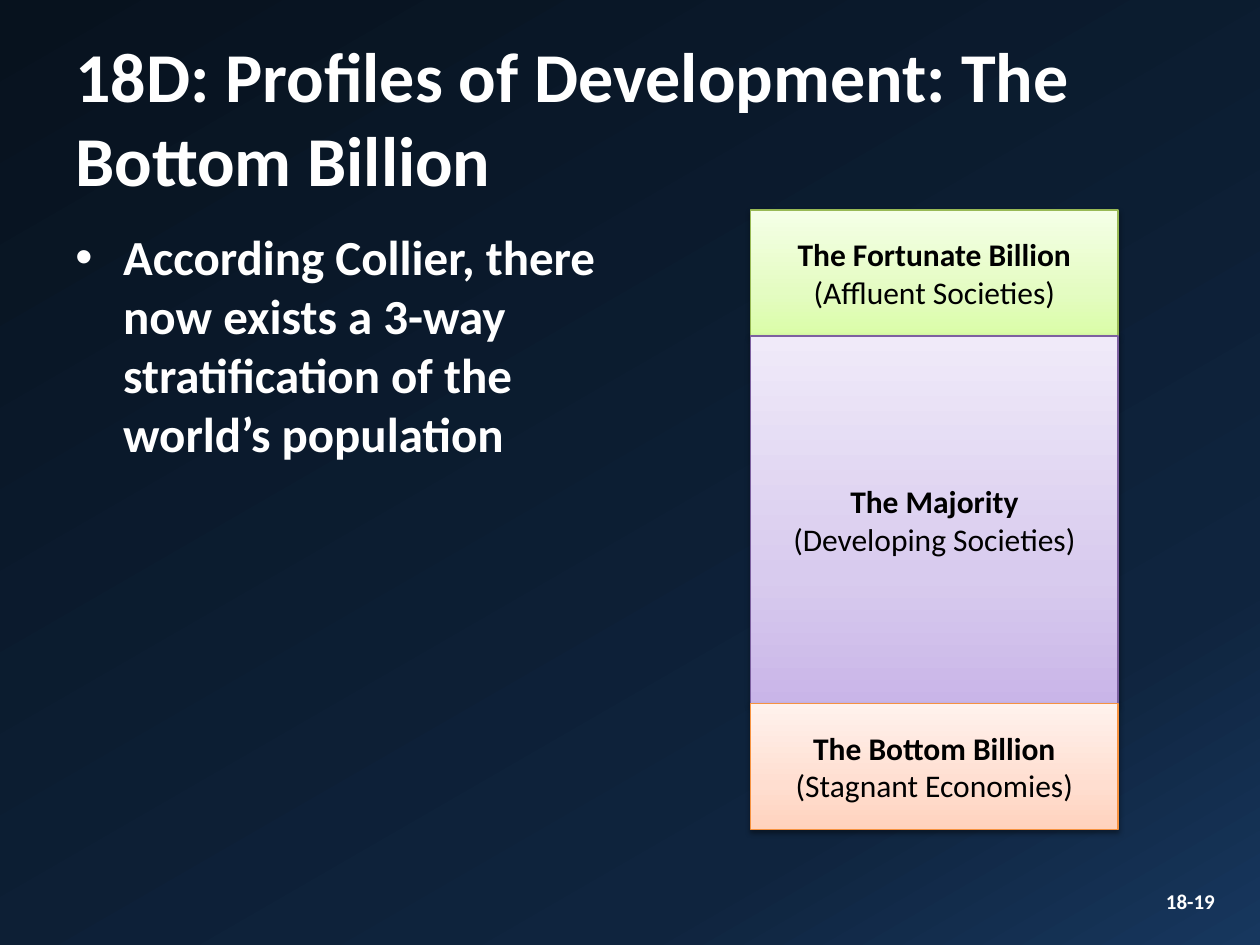
from dataclasses import dataclass

from lxml import etree
from pptx import Presentation
from pptx import util as u
from pptx.dml.color import RGBColor
from pptx.enum import shapes, text
from pptx.oxml.ns import qn

FONT = "Calibri"
WHITE = RGBColor(0xFF, 0xFF, 0xFF)
BLACK = RGBColor(0x00, 0x00, 0x00)
GREEN_LINE = RGBColor(0x98, 0xB9, 0x55)
PURPLE_LINE = RGBColor(0x7D, 0x60, 0xA0)
ORANGE_LINE = RGBColor(0xF6, 0x92, 0x40)
GREENS = tuple(map(RGBColor.from_string, ("DAFDA7", "E4FCC2", "F5FFE7")))
PURPLES = tuple(map(RGBColor.from_string, ("C9B5E8", "D8CBEE", "F0EAF9")))
ORANGES = tuple(map(RGBColor.from_string, ("FFD2BD", "FFDED0", "FFF2ED")))
NIGHT_BLUES = tuple(map(RGBColor.from_string, ("07121E", "0F243E", "17375E")))

# The stack sits on a grid of 1/24 inch
STACK_LEFT, STACK_TOP, STACK_WIDTH = 143 / 24, 40 / 24, 70 / 24


@dataclass
class Stratum:
    name: str
    description: str
    height: float
    colors: tuple
    line: RGBColor


STRATA = [
    Stratum("The Fortunate Billion", "(Affluent Societies)", 1, GREENS, GREEN_LINE),
    Stratum("The Majority", "(Developing Societies)", STACK_WIDTH, PURPLES, PURPLE_LINE),
    Stratum("The Bottom Billion", "(Stagnant Economies)", 1, ORANGES, ORANGE_LINE),
]


def add_color(parent, color: RGBColor):
    return etree.SubElement(parent, qn("a:srgbClr"), val=str(color))


def set_gradient(fill, owner, colors: tuple, middle: int, angle: int) -> None:
    """Fill with three stops; the angle runs clockwise in degrees."""
    fill.gradient()
    gradient = next(owner.iter(qn("a:gradFill")))
    for child in list(gradient):
        gradient.remove(child)
    stops = etree.SubElement(gradient, qn("a:gsLst"))
    for position, color in zip((0, middle, 100), colors):
        add_color(etree.SubElement(stops, qn("a:gs"), pos=str(position * 1000)), color)
    etree.SubElement(gradient, qn("a:lin"), ang=str(angle * 60000), scaled="0")


def add_shadow(shape) -> None:
    effects = shape._element.spPr.find(qn("a:effectLst"))
    shadow = etree.SubElement(
        effects, qn("a:outerShdw"), blurRad=str(u.Pt(3.1)), dist=str(u.Pt(1.6)),
        dir=str(90 * 60000), rotWithShape="0")
    etree.SubElement(add_color(shadow, BLACK), qn("a:alpha"), val="38000")


def write_text(frame, content: str, *, size: float, color: RGBColor = WHITE,
               bold: bool = True, align=text.PP_ALIGN.LEFT,
               anchor=text.MSO_ANCHOR.MIDDLE, new_paragraph: bool = False):
    frame.word_wrap = True
    frame.vertical_anchor = anchor
    paragraph = frame.add_paragraph() if new_paragraph else frame.paragraphs[0]
    paragraph.alignment = align
    run = paragraph.add_run()
    run.text = content
    run.font.name = FONT
    run.font.size = u.Pt(size)
    run.font.bold = bold
    run.font.color.rgb = color
    return paragraph


def add_text(slide, content: str, left: float, top: float, width: float,
             height: float, **text_format):
    box = slide.shapes.add_textbox(*map(u.Inches, (left, top, width, height)))
    return write_text(box.text_frame, content, **text_format)


def add_bullet(paragraph, indent: float) -> None:
    properties = paragraph._p.get_or_add_pPr()
    properties.set("marL", str(u.Inches(indent)))
    properties.set("indent", str(-u.Inches(indent)))
    etree.SubElement(properties, qn("a:buFont"), typeface="Arial")
    etree.SubElement(properties, qn("a:buChar"), char="•")


def add_stratum(slide, stratum: Stratum, top: float) -> None:
    shape = slide.shapes.add_shape(
        shapes.MSO_SHAPE.RECTANGLE,
        *map(u.Inches, (STACK_LEFT, top, STACK_WIDTH, stratum.height)))
    shape.shadow.inherit = False
    set_gradient(shape.fill, shape._element.spPr, stratum.colors, 35, 270)
    shape.line.color.rgb = stratum.line
    shape.line.width = u.Pt(0.75)
    add_shadow(shape)
    centered = dict(size=18, color=BLACK, align=text.PP_ALIGN.CENTER)
    write_text(shape.text_frame, stratum.name, **centered)
    write_text(shape.text_frame, stratum.description, bold=False,
               new_paragraph=True, **centered)


def main() -> None:
    presentation = Presentation()
    presentation.slide_width = u.Inches(10)
    presentation.slide_height = u.Inches(7.5)
    slide = presentation.slides.add_slide(presentation.slide_layouts[6])
    set_gradient(slide.background.fill, slide._element, NIGHT_BLUES, 78, 60)

    # Title and body
    add_text(slide, "18D: Profiles of Development: The Bottom Billion",
             0.5, 0.3, 9, 1.25, size=40)
    body = add_text(
        slide,
        "According Collier, there now exists a 3-way stratification of the "
        "world’s population",
        0.5, 1.75, 4.5, 4.92, size=28, anchor=text.MSO_ANCHOR.TOP)
    body.space_before = u.Pt(5.6)
    add_bullet(body, 0.38)

    # Slide number
    add_text(slide, "18-19", 6.92, 6.95, 2.82, 0.4, size=12,
             align=text.PP_ALIGN.RIGHT)

    # Stack of population strata
    top = STACK_TOP
    for stratum in STRATA:
        add_stratum(slide, stratum, top)
        top += stratum.height

    presentation.save("out.pptx")


if __name__ == "__main__":
    main()
